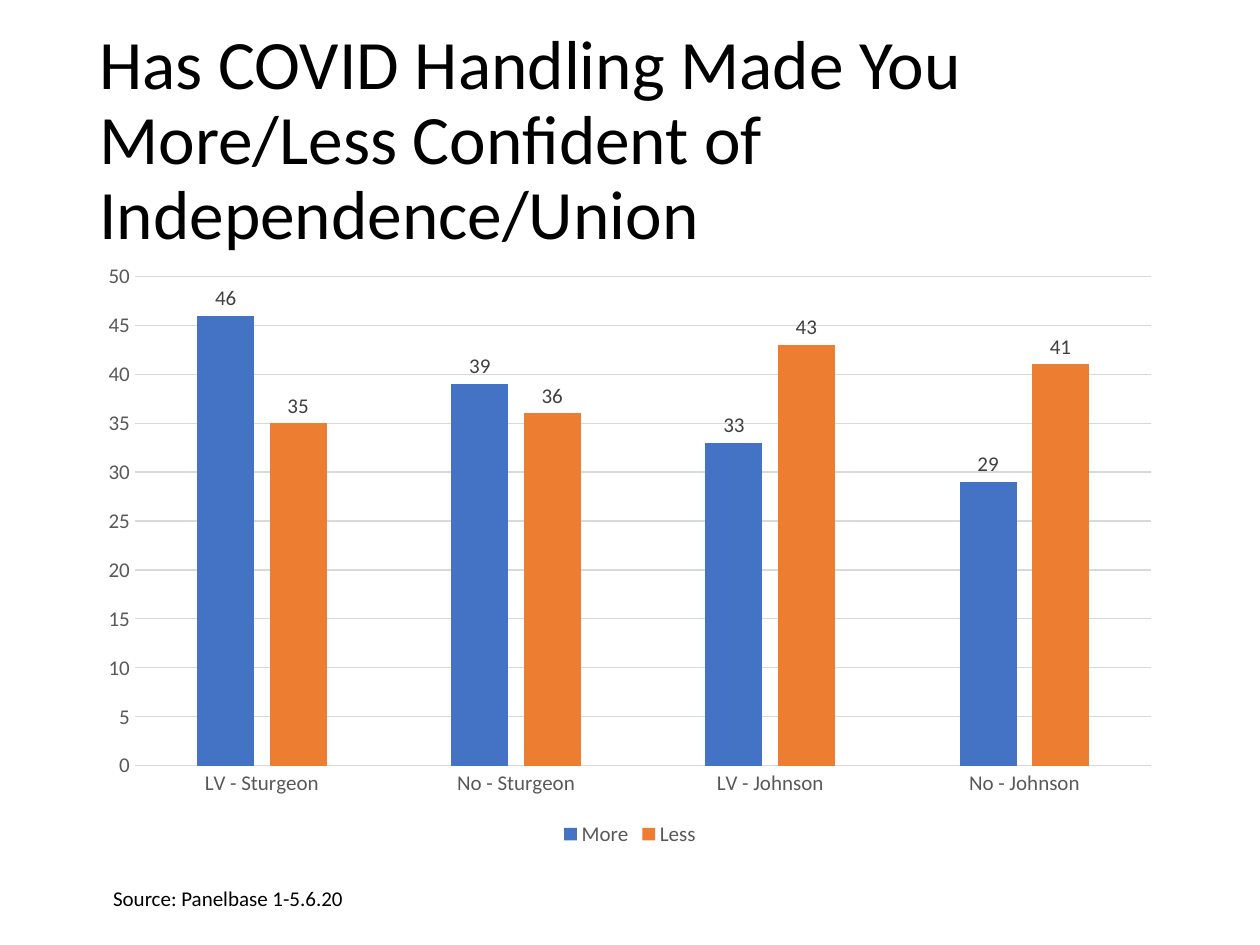
from pptx import Presentation
from pptx.chart.data import CategoryChartData
from pptx.dml.color import RGBColor
from pptx.enum.chart import XL_CHART_TYPE, XL_LABEL_POSITION, XL_LEGEND_POSITION, XL_TICK_MARK
from pptx.enum.text import MSO_ANCHOR, MSO_AUTO_SIZE, PP_ALIGN
from pptx.util import Cm, Pt

FONT = "Calibri"
COLOURS = {
    "text": "000000",
    "axis": "595959",
    "label": "404040",
    "grid": "D9D9D9",
    "More": "4472C4",
    "Less": "ED7D31",
}
MARGIN = Cm(1.75)
CONTENT_WIDTH = Cm(21.9)

TITLE = "Has COVID Handling Made You More/Less Confident of Independence/Union"
SOURCE = "Source: Panelbase 1-5.6.20"
GROUPS = ["LV - Sturgeon", "No - Sturgeon", "LV - Johnson", "No - Johnson"]
CONFIDENCE = {"More": [46, 39, 33, 29], "Less": [35, 36, 43, 41]}


def colour(name):
    return RGBColor.from_string(COLOURS[name])


def style_font(font, size, colour_name):
    font.name = FONT
    font.size = Pt(size)
    font.bold = False
    font.color.rgb = colour(colour_name)


def style_line(line):
    line.color.rgb = colour("grid")
    line.width = Pt(0.75)


def write_text(frame, text, size):
    frame.word_wrap = True
    paragraph = frame.paragraphs[0]
    paragraph.alignment = PP_ALIGN.LEFT
    run = paragraph.add_run()
    run.text = text
    style_font(run.font, size, "text")
    return paragraph


def add_title(slide):
    title = slide.shapes.title
    title.left, title.top = MARGIN, Cm(1.02)
    title.width, title.height = CONTENT_WIDTH, Cm(3.68)
    frame = title.text_frame
    frame.auto_size = MSO_AUTO_SIZE.NONE
    frame.vertical_anchor = MSO_ANCHOR.MIDDLE
    write_text(frame, TITLE, 39.6).line_spacing = 0.9


def style_axes(chart):
    for axis in (chart.category_axis, chart.value_axis):
        axis.major_tick_mark = axis.minor_tick_mark = XL_TICK_MARK.NONE
        style_font(axis.tick_labels.font, 12, "axis")
    style_line(chart.category_axis.format.line)
    scale = chart.value_axis
    scale.minimum_scale, scale.maximum_scale, scale.major_unit = 0, 50, 5
    scale.format.line.fill.background()
    style_line(scale.major_gridlines.format.line)


def style_series(series):
    series.invert_if_negative = False
    series.format.fill.solid()
    series.format.fill.fore_color.rgb = colour(series.name)
    labels = series.data_labels
    labels.show_value = True
    labels.position = XL_LABEL_POSITION.OUTSIDE_END
    style_font(labels.font, 12, "label")


def add_confidence_chart(slide):
    data = CategoryChartData()
    data.categories = GROUPS
    for answer, percentages in CONFIDENCE.items():
        data.add_series(answer, percentages)
    chart = slide.shapes.add_chart(
        XL_CHART_TYPE.COLUMN_CLUSTERED, MARGIN, Cm(5.08), CONTENT_WIDTH, Cm(12.09), data
    ).chart
    style_font(chart.font, 10, "text")
    chart.has_title = False
    chart.has_legend = True
    chart.legend.position = XL_LEGEND_POSITION.BOTTOM
    chart.legend.include_in_layout = False
    style_font(chart.legend.font, 12, "axis")
    style_axes(chart)
    plot = chart.plots[0]
    plot.gap_width, plot.overlap = 219, -27
    plot.vary_by_categories = False
    for series in plot.series:
        style_series(series)


def add_source(slide):
    source = slide.shapes.add_textbox(Cm(2.03), Cm(17.73), Cm(19.28), Cm(0.77))
    write_text(source.text_frame, SOURCE, 12)
    source.text_frame.auto_size = MSO_AUTO_SIZE.SHAPE_TO_FIT_TEXT


def main():
    deck = Presentation()
    deck.slide_width, deck.slide_height = Cm(25.4), Cm(19.05)
    slide = deck.slides.add_slide(deck.slide_layouts.get_by_name("Title Only"))
    add_title(slide)
    add_confidence_chart(slide)
    add_source(slide)
    deck.save("out.pptx")


if __name__ == "__main__":
    main()
